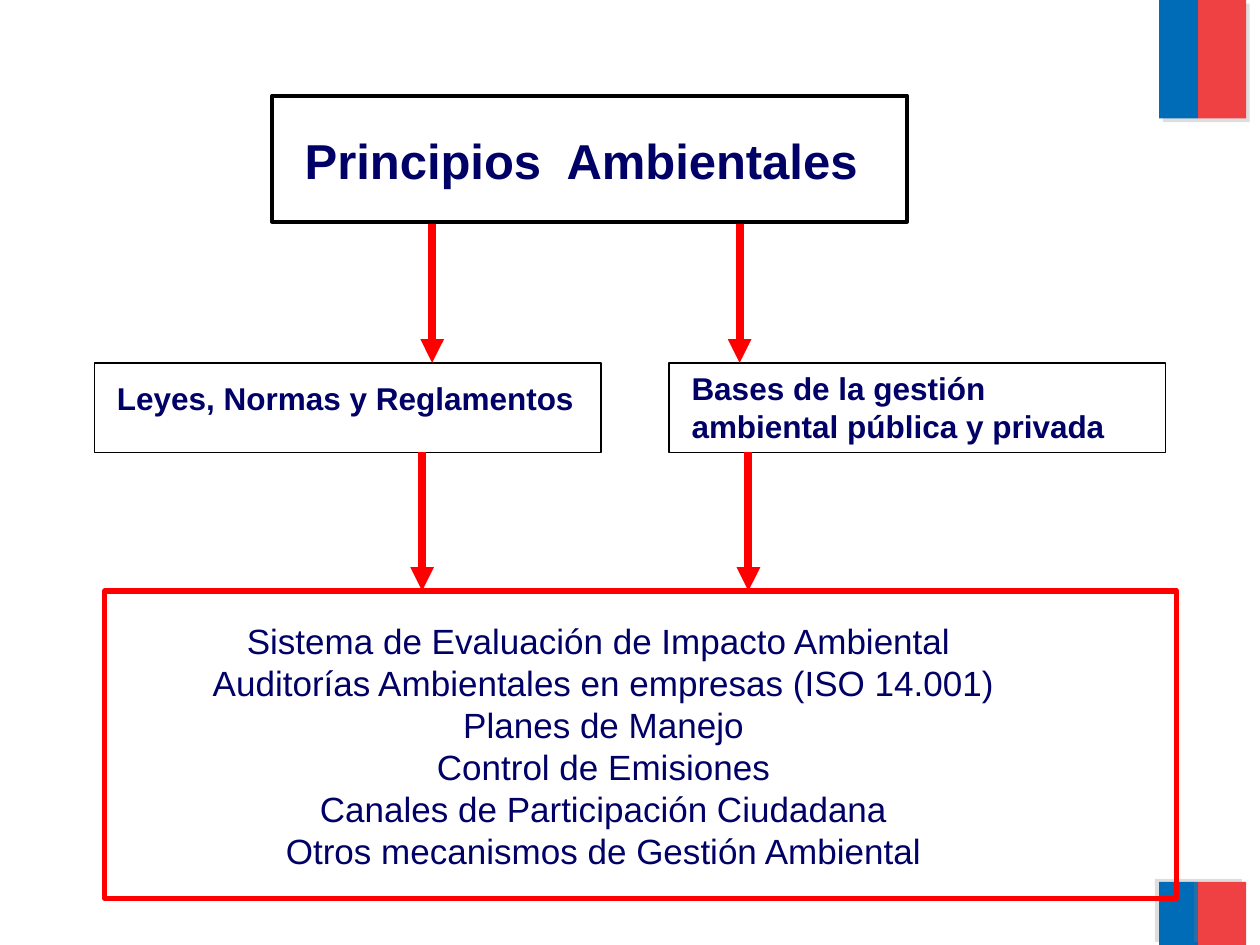
from dataclasses import dataclass

from lxml.etree import SubElement
from pptx import Presentation
from pptx.dml.color import RGBColor
from pptx.enum.shapes import MSO_CONNECTOR, MSO_SHAPE
from pptx.enum.text import MSO_AUTO_SIZE, PP_ALIGN
from pptx.oxml.ns import qn
from pptx.slide import Slide
from pptx.util import Inches, Pt

NAVY = RGBColor(0x00, 0x00, 0x66)
BLACK = RGBColor(0x00, 0x00, 0x00)
RED = RGBColor(0xFF, 0x00, 0x00)
FLAG_BLUE = RGBColor(0x00, 0x6C, 0xB7)
FLAG_RED = RGBColor(0xEF, 0x41, 0x44)
SHADOW_GRAY = RGBColor(0x80, 0x80, 0x80)

CELL = Inches(0.1)
COLUMNS, ROWS = 100, 75


def cells(*counts):
    return [round(count * CELL) for count in counts]


@dataclass
class Diagram:
    slide: Slide
    font: str = "Arial"
    text_color: RGBColor = NAVY
    arrow_color: RGBColor = RED
    arrow_width: float = 4.5

    def rectangle(self, area):
        shape = self.slide.shapes.add_shape(MSO_SHAPE.RECTANGLE, *cells(*area))
        shape.shadow.inherit = False
        return shape

    def flag_band(self, area, color, shadow_angle):
        shape = self.rectangle(area)
        shape.fill.solid()
        shape.fill.fore_color.rgb = color
        shape.line.fill.background()
        effects = shape._element.spPr.find(qn("a:effectLst"))
        shadow = SubElement(effects, qn("a:outerShdw"), dist=str(Pt(3)),
                            dir=str(shadow_angle * 60000), algn="ctr", rotWithShape="0")
        shade = SubElement(shadow, qn("a:srgbClr"), val=str(SHADOW_GRAY))
        SubElement(shade, qn("a:alpha"), val="25000")

    def frame(self, area, color, width):
        shape = self.rectangle(area)
        shape.fill.background()
        shape.line.color.rgb = color
        shape.line.width = Pt(width)

    def text(self, area, lines, size, bold=False, align=PP_ALIGN.LEFT, wrap=True):
        text_frame = self.slide.shapes.add_textbox(*cells(*area)).text_frame
        text_frame.word_wrap = wrap
        text_frame.auto_size = MSO_AUTO_SIZE.SHAPE_TO_FIT_TEXT
        for index, line in enumerate(lines):
            paragraph = text_frame.add_paragraph() if index else text_frame.paragraphs[0]
            paragraph.alignment = align
            run = paragraph.add_run()
            run.text = line
            run.font.name = self.font
            run.font.size = Pt(size)
            run.font.bold = bold
            run.font.color.rgb = self.text_color

    def down_arrow(self, column, top, length):
        connector = self.slide.shapes.add_connector(
            MSO_CONNECTOR.STRAIGHT, *cells(column, top, column, top + length))
        connector.line.color.rgb = self.arrow_color
        connector.line.width = Pt(self.arrow_width)
        SubElement(connector.line._get_or_add_ln(), qn("a:tailEnd"), type="triangle")
        SubElement(connector._element.spPr, qn("a:effectLst"))


def main():
    presentation = Presentation()
    presentation.slide_width, presentation.slide_height = cells(COLUMNS, ROWS)
    diagram = Diagram(presentation.slides.add_slide(presentation.slide_layouts[6]))

    for top, height, shadow_angle in ((0, 9.4, 45), (70, 5, 215)):
        diagram.flag_band((92, top, 3.1, height), FLAG_BLUE, shadow_angle)
        diagram.flag_band((95.1, top, 3.8, height), FLAG_RED, shadow_angle)

    diagram.text((23.2, 9.9, 48, 5.7), ["Principios  Ambientales"], 28, bold=True)
    diagram.frame((21.6, 7.6, 50.4, 10), BLACK, 2.25)

    diagram.text((8.3, 29.6, 38.3, 4), ["Leyes, Normas y Reglamentos"], 18,
                 bold=True, wrap=False)
    diagram.text((53.9, 28.8, 36.4, 7),
                 ["Bases de la gestión ambiental pública y privada"], 18, bold=True)
    for left, width in ((7.5, 40.2), (53.1, 39.4)):
        diagram.frame((left, 28.8, width, 7.1), BLACK, 0.75)

    for top, columns in ((17.8, (34.3, 58.7)), (35.9, (33.5, 59.4))):
        for column in columns:
            diagram.down_arrow(column, top, 11)

    diagram.text((8.8, 48.7, 78.2, 21), [
        "Sistema de Evaluación de Impacto Ambiental ",
        "Auditorías Ambientales en empresas (ISO 14.001)",
        "Planes de Manejo",
        "Control de Emisiones",
        "Canales de Participación Ciudadana",
        "Otros mecanismos de Gestión Ambiental",
    ], 20, align=PP_ALIGN.CENTER)
    diagram.frame((8.3, 46.9, 85.1, 24.4), RED, 3)

    presentation.save("out.pptx")


if __name__ == "__main__":
    main()
